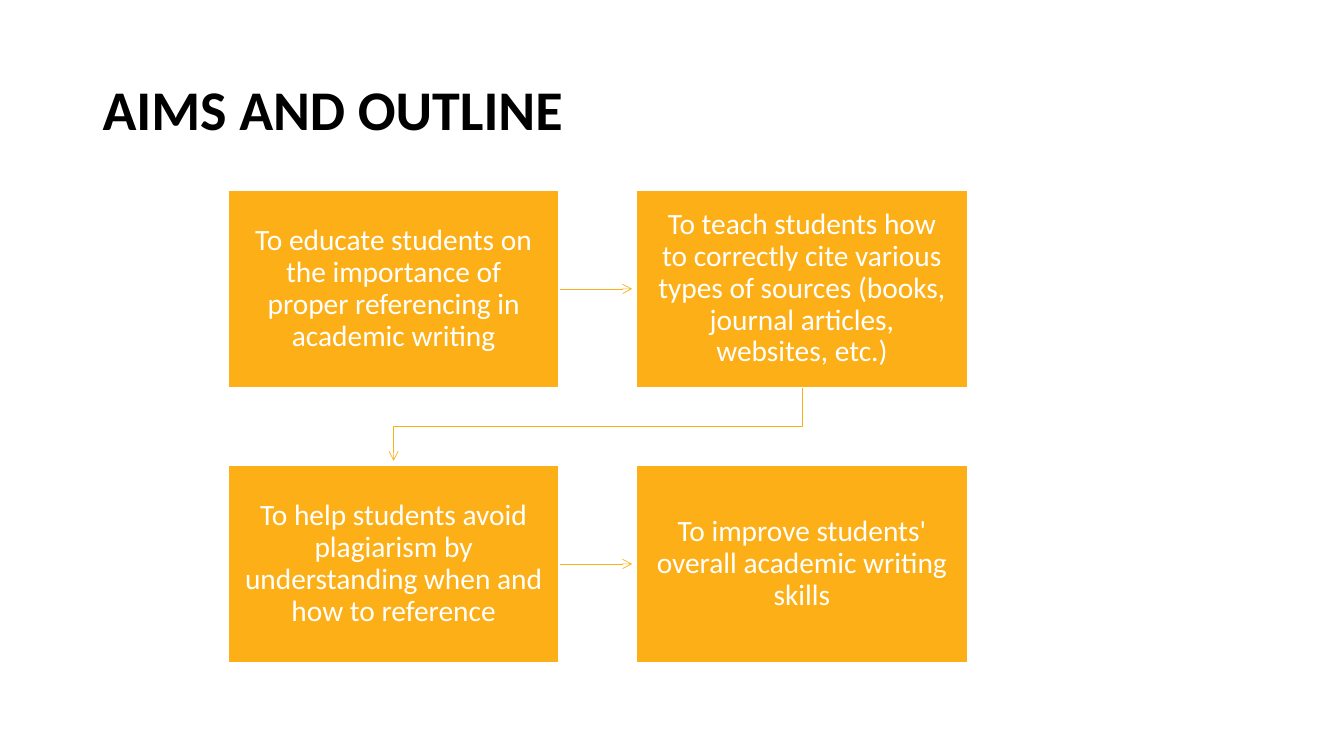
from dataclasses import dataclass

from lxml import etree
from pptx import Presentation
from pptx.dml.color import RGBColor
from pptx.enum.dml import MSO_THEME_COLOR
from pptx.enum.shapes import MSO_CONNECTOR, MSO_SHAPE
from pptx.enum.text import MSO_ANCHOR, MSO_AUTO_SIZE, PP_ALIGN
from pptx.oxml.ns import qn
from pptx.shapes.autoshape import Shape
from pptx.shapes.connector import Connector
from pptx.slide import Slide
from pptx.util import Cm, Pt

RECTANGLE = MSO_SHAPE.RECTANGLE
STRAIGHT = MSO_CONNECTOR.STRAIGHT
MIDDLE = MSO_ANCHOR.MIDDLE
LEFT = PP_ALIGN.LEFT
CENTER = PP_ALIGN.CENTER
NO_AUTOFIT = MSO_AUTO_SIZE.NONE

AMBER = RGBColor(0xFC, 0xAF, 0x17)
WHITE = RGBColor(0xFF, 0xFF, 0xFF)
BLACK = RGBColor(0, 0, 0)
FONT = "Calibri"

TITLE_ONLY_LAYOUT = 5
RIGHT_SIDE = 3
GRID_LEFT, GRID_TOP = Cm(5.74), Cm(4.78)
COLUMN_STEP, ROW_STEP = Cm(10.29), Cm(6.98 - 0.05)
AIM_WIDTH, AIM_HEIGHT = Cm(8.36), Cm(5)
ARROW_GAP = Cm(0.1)


@dataclass(frozen=True)
class Aim:
    text: str
    column: int
    row: int

    @property
    def left(self) -> int:
        return GRID_LEFT + self.column * COLUMN_STEP

    @property
    def top(self) -> int:
        return GRID_TOP + self.row * ROW_STEP

    @property
    def center(self) -> int:
        return self.left + AIM_WIDTH // 2

    @property
    def middle(self) -> int:
        return self.top + AIM_HEIGHT // 2


AIMS = [
    Aim("To educate students on the importance of proper referencing in academic writing", 0, 0),
    Aim("To teach students how to correctly cite various types of sources "
        "(books, journal articles, websites, etc.)", 1, 0),
    Aim("To help students avoid plagiarism by understanding when and how to reference", 0, 1),
    Aim("To improve students' overall academic writing skills", 1, 1),
]


def add_title(slide: Slide, text: str) -> None:
    title = slide.shapes.title
    title.left, title.top, title.width, title.height = Cm(2.33), Cm(1.01), Cm(29.21), Cm(3.63)
    frame = title.text_frame
    frame.text = text
    frame.vertical_anchor = MIDDLE
    frame.auto_size = NO_AUTOFIT
    paragraph = frame.paragraphs[0]
    paragraph.alignment = LEFT
    paragraph.line_spacing = 0.9
    font = paragraph.font
    font.name, font.size, font.bold = FONT, Pt(40), True
    font.color.rgb = BLACK


def add_aim(slide: Slide, aim: Aim) -> Shape:
    box = slide.shapes.add_shape(RECTANGLE, aim.left, aim.top, AIM_WIDTH, AIM_HEIGHT)
    box.shadow.inherit = False
    box.fill.solid()
    box.fill.fore_color.rgb = AMBER
    box.line.color.rgb = WHITE
    box.line.width = Pt(1.5)
    frame = box.text_frame
    frame.word_wrap = True
    frame.vertical_anchor = MIDDLE
    frame.margin_left = frame.margin_right = Cm(0.41)
    frame.margin_top = frame.margin_bottom = Cm(0.43)
    frame.text = aim.text
    paragraph = frame.paragraphs[0]
    paragraph.alignment = CENTER
    paragraph.line_spacing = 0.9
    font = paragraph.font
    font.name, font.size = FONT, Pt(21)
    font.color.rgb = WHITE
    return box


def style_arrow(arrow: Shape | Connector) -> None:
    arrow.line.color.rgb = AMBER
    arrow.line.width = Pt(0.5)
    properties = arrow.element.spPr
    etree.SubElement(properties.find(qn("a:ln")), qn("a:tailEnd"), type="arrow")
    if properties.find(qn("a:effectLst")) is None:
        etree.SubElement(properties, qn("a:effectLst"))


def add_row_arrow(slide: Slide, source: Aim, source_box: Shape, target: Aim) -> None:
    arrow = slide.shapes.add_connector(
        STRAIGHT, source.left + AIM_WIDTH, source.middle, target.left - ARROW_GAP, target.middle)
    arrow.begin_connect(source_box, RIGHT_SIDE)
    style_arrow(arrow)


def add_turn_arrow(slide: Slide, source: Aim, target: Aim) -> None:
    source_bottom = source.top + AIM_HEIGHT
    turn = (source_bottom + target.top) // 2
    builder = slide.shapes.build_freeform(source.center, source_bottom)
    builder.add_line_segments(
        [(source.center, turn), (target.center, turn), (target.center, target.top - ARROW_GAP)],
        close=False)
    arrow = builder.convert_to_shape()
    arrow.fill.background()
    style_arrow(arrow)


def main() -> None:
    presentation = Presentation()
    presentation.slide_width, presentation.slide_height = Cm(33.87), Cm(19.05)
    slide = presentation.slides.add_slide(presentation.slide_layouts[TITLE_ONLY_LAYOUT])
    slide.background.fill.solid()
    slide.background.fill.fore_color.theme_color = MSO_THEME_COLOR.BACKGROUND_1

    add_title(slide, "AIMS AND OUTLINE")
    boxes = [add_aim(slide, aim) for aim in AIMS]
    for source, box, target in zip(AIMS, boxes, AIMS[1:]):
        if source.row == target.row:
            add_row_arrow(slide, source, box, target)
        else:
            add_turn_arrow(slide, source, target)

    presentation.save("out.pptx")


if __name__ == "__main__":
    main()
